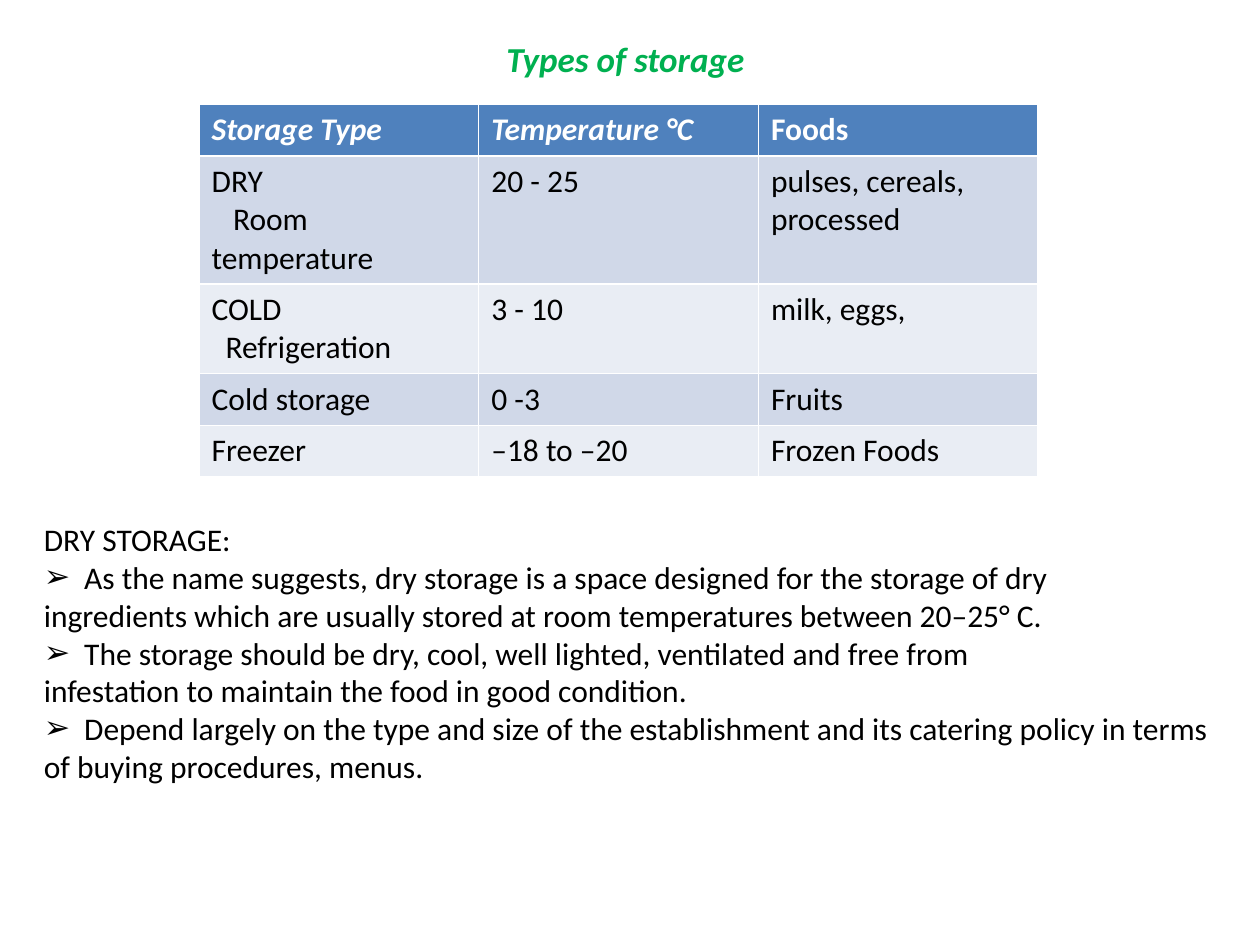
from lxml import etree
from pptx import Presentation
from pptx.dml.color import RGBColor
from pptx.enum import text
from pptx.oxml import ns
from pptx.util import Inches, Pt

THEME = {
    "font": "Calibri",
    "title_size": 20,
    "body_size": 18,
    "title": "00B050",
    "text": "000000",
    "header_text": "FFFFFF",
    "header_fill": "4F81BD",
    "bands": ("D0D8E8", "E9EDF4"),
}

TITLE = "Types of storage"
HEADERS = [("Storage Type", True), ("Temperature °C", True), ("Foods", False)]
ROWS = [
    (["DRY", "Room temperature"], "20 - 25", "pulses, cereals, processed"),
    (["COLD", "Refrigeration"], "3 - 10", "milk, eggs,"),
    (["Cold storage"], "0 -3", "Fruits"),
    (["Freezer"], "–18 to –20", "Frozen Foods"),
]
SUBTYPE_INDENTS = {"Room temperature": 0.17, "Refrigeration": 0.11}
BODY = [
    ("DRY STORAGE:", False),
    ("As the name suggests, dry storage is a space designed for the storage of dry", True),
    ("ingredients which are usually stored at room temperatures between 20–25° C.", False),
    ("The storage should be dry, cool, well lighted, ventilated and free from", True),
    ("infestation to maintain the food in good condition.", False),
    ("Depend largely on the type and size of the establishment and its catering policy "
     "in terms of buying procedures, menus.", True),
]
BULLET = "➢"
BULLET_GAP = 0.32
COLUMN_WIDTH = 2.22
ROW_HEIGHT = 0.41


def write(paragraph, content, size=THEME["body_size"], color=THEME["text"],
          bold=False, italic=False, indent=0, bullet=False):
    run = paragraph.add_run()
    run.text = "\t" + content if bullet else content
    run.font.name = THEME["font"]
    run.font.size = Pt(size)
    run.font.color.rgb = RGBColor.from_string(color)
    run.font.bold = bold
    run.font.italic = italic
    properties = paragraph._p.get_or_add_pPr()
    properties.set("marL", "0")
    properties.set("indent", str(Inches(indent)))
    if bullet:
        etree.SubElement(properties, ns.qn("a:buFont"), typeface=THEME["font"])
        etree.SubElement(properties, ns.qn("a:buChar"), char=BULLET)
        tabs = etree.SubElement(properties, ns.qn("a:tabLst"))
        etree.SubElement(tabs, ns.qn("a:tab"), pos=str(Inches(BULLET_GAP)), algn="l")


def paragraphs(frame, count):
    return [frame.paragraphs[0]] + [frame.add_paragraph() for _ in range(count - 1)]


def fill_cell(cell, lines, fill, **style):
    cell.fill.solid()
    cell.fill.fore_color.rgb = RGBColor.from_string(fill)
    for paragraph, line in zip(paragraphs(cell.text_frame, len(lines)), lines):
        write(paragraph, line, indent=SUBTYPE_INDENTS.get(line, 0), **style)


def add_storage_table(slide):
    row_count, column_count = len(ROWS) + 1, len(HEADERS)
    table = slide.shapes.add_table(
        row_count, column_count, Inches(1.58), Inches(0.83),
        Inches(COLUMN_WIDTH * column_count), Inches(ROW_HEIGHT * row_count)).table
    for column, (header, italic) in enumerate(HEADERS):
        fill_cell(table.cell(0, column), [header], THEME["header_fill"],
                  color=THEME["header_text"], bold=True, italic=italic)
    for row, (kinds, temperature, foods) in enumerate(ROWS, 1):
        fill = THEME["bands"][(row - 1) % 2]
        for column, lines in enumerate((kinds, [temperature], [foods])):
            fill_cell(table.cell(row, column), lines, fill)


def add_text_frame(slide, left, top, width, height, wrap):
    box = slide.shapes.add_textbox(*map(Inches, (left, top, width, height)))
    frame = box.text_frame
    frame.word_wrap = wrap
    frame.auto_size = text.MSO_AUTO_SIZE.SHAPE_TO_FIT_TEXT
    return frame


def main():
    presentation = Presentation()
    presentation.slide_width = Inches(10)
    presentation.slide_height = Inches(7.5)
    slide = presentation.slides.add_slide(presentation.slide_layouts[6])

    add_storage_table(slide)
    title = add_text_frame(slide, 3.92, 0.25, 2.1, 0.44, wrap=False)
    write(title.paragraphs[0], TITLE, size=THEME["title_size"],
          color=THEME["title"], bold=True, italic=True)
    body = add_text_frame(slide, 0.25, 4.08, 9.5, 2.22, wrap=True)
    for paragraph, (line, bullet) in zip(paragraphs(body, len(BODY)), BODY):
        write(paragraph, line, bullet=bullet)

    presentation.save("out.pptx")


if __name__ == "__main__":
    main()
